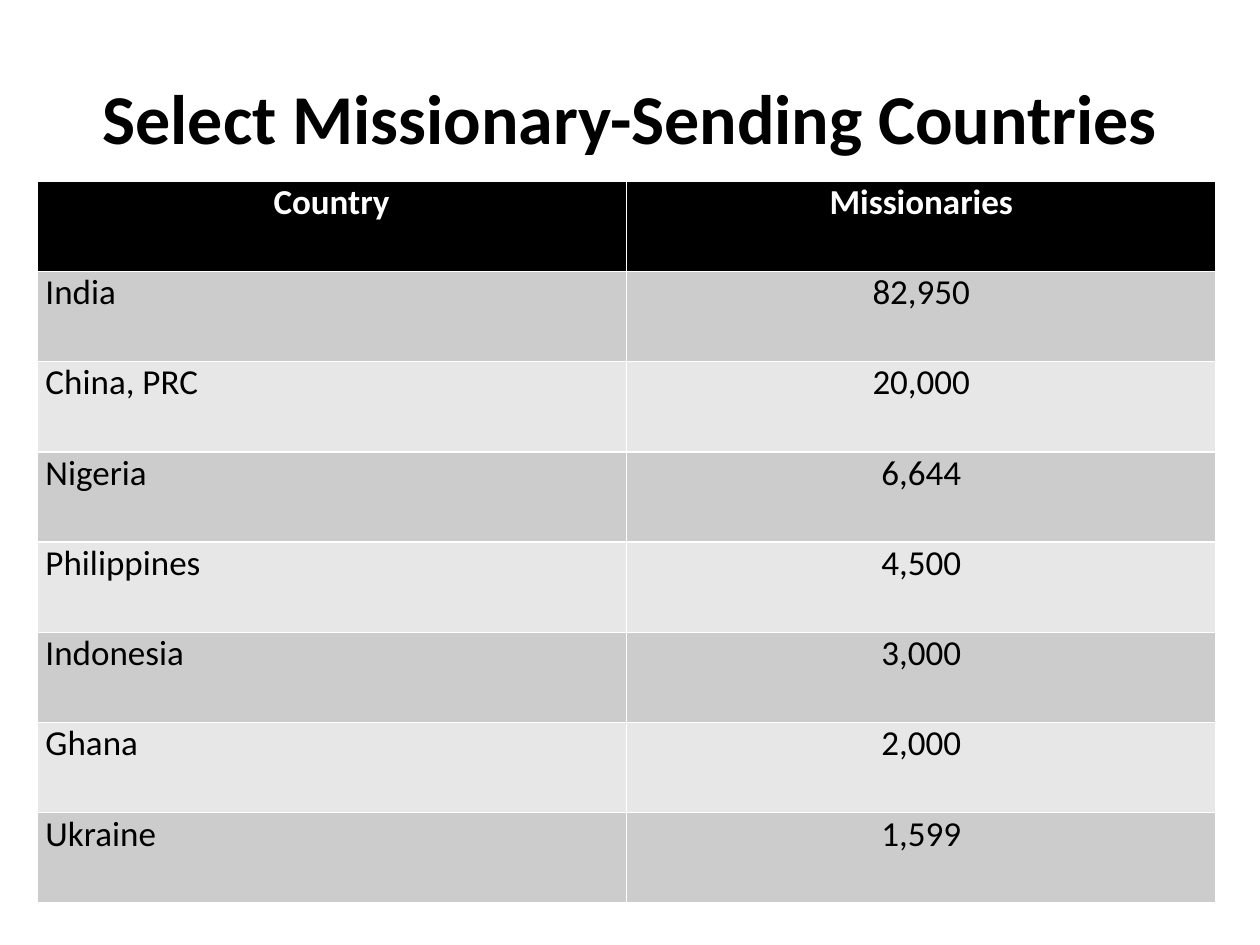
"""Build a slide with a table of select missionary-sending countries."""
from pptx import Presentation
from pptx.dml.color import RGBColor
from pptx.enum.text import MSO_ANCHOR, PP_ALIGN
from pptx.util import Pt

LEFT, CENTER = PP_ALIGN.LEFT, PP_ALIGN.CENTER
TOP, MIDDLE = MSO_ANCHOR.TOP, MSO_ANCHOR.MIDDLE
BLACK = RGBColor(0x00, 0x00, 0x00)
WHITE = RGBColor(0xFF, 0xFF, 0xFF)
DARK = RGBColor(0xCC, 0xCC, 0xCC)
LIGHT = RGBColor(0xE7, 0xE7, 0xE7)

HEAD = ("Country", "Missionaries")
ROWS = [
    ("India", "82,950"),
    ("China, PRC", "20,000"),
    ("Nigeria", "6,644"),
    ("Philippines", "4,500"),
    ("Indonesia", "3,000"),
    ("Ghana", "2,000"),
    ("Ukraine", "1,599"),
]


def write(frame, text, size=20, color=BLACK, bold=False, align=LEFT, font="Calibri"):
    para = frame.paragraphs[0]
    para.alignment = align
    run = para.add_run()
    run.text = text
    run.font.name = font
    run.font.size = Pt(size)
    run.font.bold = bold
    run.font.color.rgb = color


class Deck:
    def __init__(self, width, height):
        self.file = Presentation()
        self.file.slide_width, self.file.slide_height = Pt(width), Pt(height)
        self.slide = self.file.slides.add_slide(self.file.slide_layouts[6])

    def title(self, text, left, top, width, height):
        box = self.slide.shapes.add_textbox(Pt(left), Pt(top), Pt(width), Pt(height))
        frame = box.text_frame
        frame.word_wrap = True
        frame.vertical_anchor = MIDDLE
        write(frame, text, size=40, bold=True, align=CENTER)

    def cell(self, cell, text, fill, **style):
        cell.margin_left = cell.margin_right = Pt(5)
        cell.margin_top = cell.margin_bottom = Pt(0)
        cell.vertical_anchor = TOP
        cell.fill.solid()
        cell.fill.fore_color.rgb = fill
        write(cell.text_frame, text, **style)

    def table(self, head, rows, left, top, width, height):
        table = self.slide.shapes.add_table(
            len(rows) + 1, len(head), Pt(left), Pt(top), Pt(width), Pt(height)
        ).table
        for col, text in enumerate(head):
            self.cell(table.cell(0, col), text, BLACK,
                      color=WHITE, bold=True, align=CENTER)
        for row, pair in enumerate(rows, 1):
            fill = DARK if row % 2 else LIGHT
            for col, text in enumerate(pair):
                self.cell(table.cell(row, col), text, fill,
                          align=CENTER if col else LEFT)


def main():
    deck = Deck(720, 540)
    deck.title("Select Missionary-Sending Countries", 36, 21.6, 648, 90)
    deck.table(HEAD, ROWS, 21, 103.5, 674, 412.5)
    deck.file.save("out.pptx")


if __name__ == "__main__":
    main()
